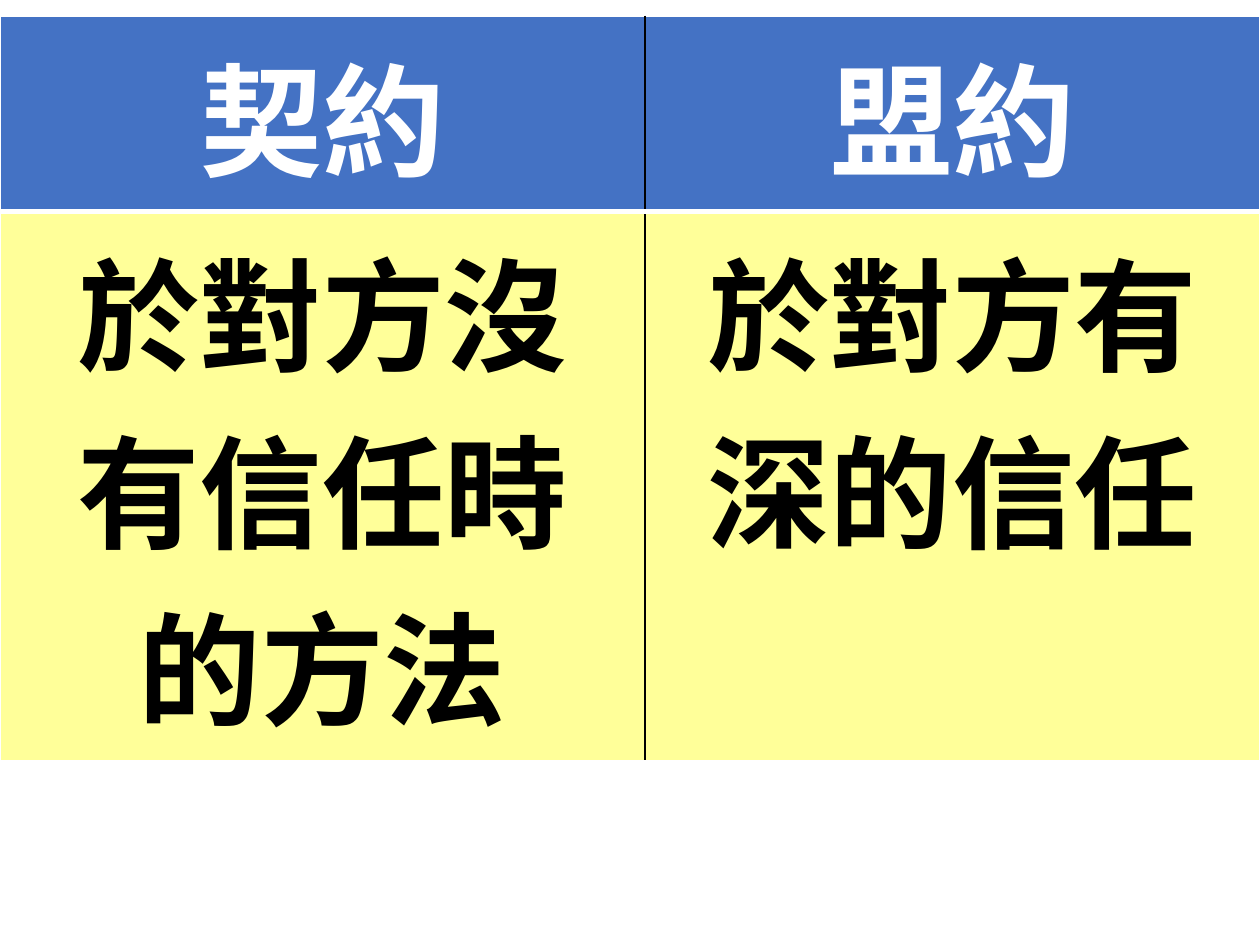
from lxml.etree import SubElement
from pptx import Presentation
from pptx.dml.color import RGBColor
from pptx.enum.text import PP_ALIGN as Align
from pptx.oxml.ns import qn
from pptx.util import Cm, Pt

FONT = "Noto Sans CJK SC"
WHITE, BLACK, BLUE, YELLOW = "FFFFFF", "000000", "4472C4", "FFFF99"
HEADINGS = ["契約", "盟約"]
MEANINGS = ["於對方沒有信任時的方法", "於對方有\n深的信任"]
COLUMN_WIDTHS = [13, 12.4]
ROW_HEIGHTS = [3.89, 11.03]


def color(value):
    return RGBColor.from_string(value)


def write_text(frame, text, *, size, ink, bold=True, align=Align.CENTER):
    """Write one paragraph for each line of text."""
    for index, line in enumerate(text.split("\n")):
        para = frame.paragraphs[0] if index == 0 else frame.add_paragraph()
        para.alignment = align
        span = para.add_run()
        span.text = line
        span.font.size, span.font.bold = Pt(size), bold
        span.font.name = FONT
        span.font.color.rgb = color(ink)
        SubElement(span.font._element, qn("a:ea"), typeface=FONT)


def set_borders(cell, **sides):
    """Draw borders given as L, R, T, B = (color, points), in that order."""
    properties = cell._tc.get_or_add_tcPr()
    for position, (side, (ink, width)) in enumerate(sides.items()):
        line = SubElement(properties, qn(f"a:ln{side}"), w=str(Pt(width)))
        fill = SubElement(line, qn("a:solidFill"))
        SubElement(fill, qn("a:srgbClr"), val=ink)
        properties.insert(position, line)


def add_comparison(page, left, top, widths, heights):
    box = page.shapes.add_table(2, 2, Cm(left), Cm(top),
                                Cm(sum(widths)), Cm(sum(heights)))
    table = box.table
    for column, width in zip(table.columns, widths):
        column.width = Cm(width)
    for row, height in zip(table.rows, heights):
        row.height = Cm(height)

    row_styles = [(HEADINGS, WHITE, BLUE, 3), (MEANINGS, BLACK, YELLOW, 1)]
    for row, (texts, ink, fill, bottom) in enumerate(row_styles):
        for column, text in enumerate(texts):
            cell = table.cell(row, column)
            cell.margin_left = cell.margin_right = Cm(0.34)
            cell.margin_top = cell.margin_bottom = Cm(0.18)
            cell.fill.solid()
            cell.fill.fore_color.rgb = color(fill)
            write_text(cell.text_frame, text, size=70, ink=ink)
            set_borders(cell,
                        L=(BLACK if column == 1 else WHITE, 1),
                        R=(BLACK if column == 0 else WHITE, 1),
                        T=(WHITE, 3 if row == 1 else 1),
                        B=(WHITE, bottom))


def main():
    deck = Presentation()
    deck.slide_width, deck.slide_height = Cm(25.4), Cm(19.05)
    page = deck.slides.add_slide(deck.slide_layouts[6])
    add_comparison(page, 0, 0.33, COLUMN_WIDTHS, ROW_HEIGHTS)
    deck.save("out.pptx")


if __name__ == "__main__":
    main()
